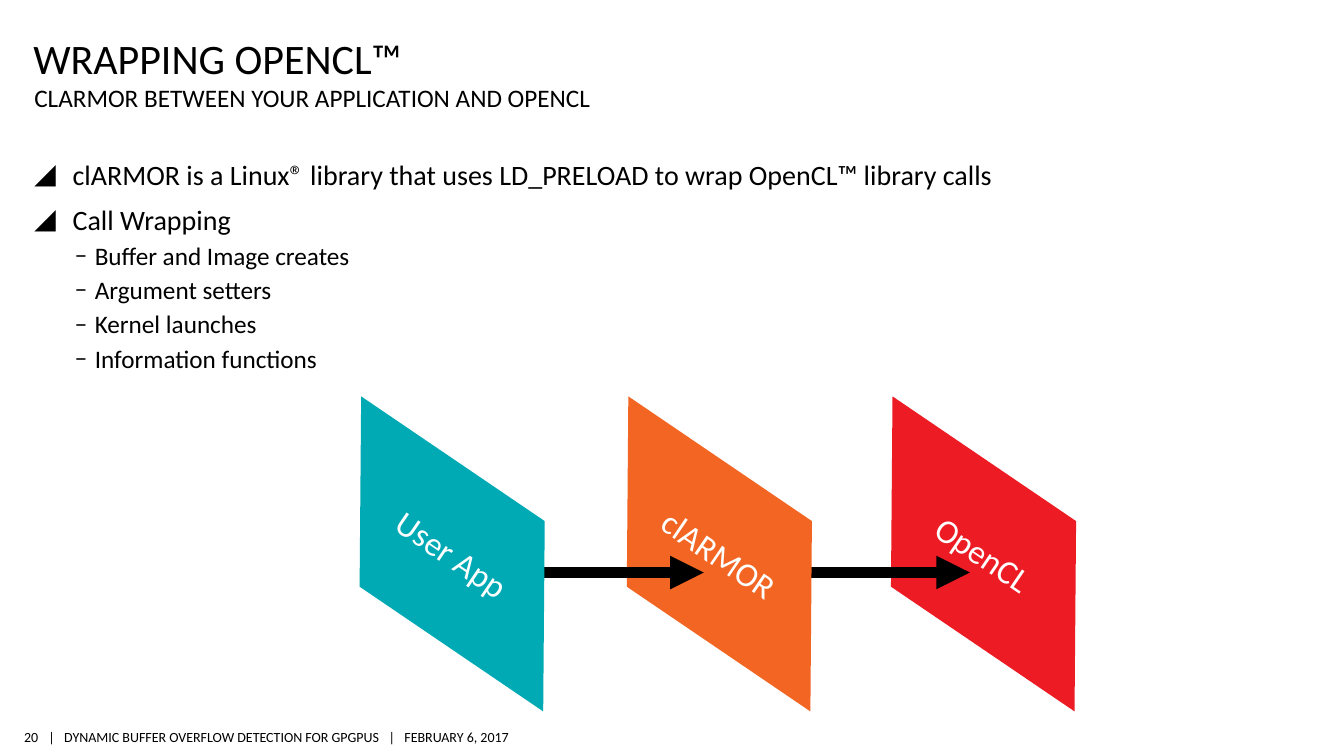
from dataclasses import dataclass

from lxml.etree import SubElement
from pptx import Presentation
from pptx.dml.color import RGBColor as RGB
from pptx.enum.shapes import MSO_CONNECTOR as CONNECTOR, MSO_SHAPE as SHAPE
from pptx.enum.text import MSO_ANCHOR as ANCHOR, MSO_AUTO_SIZE as AUTO_SIZE, PP_ALIGN as ALIGN
from pptx.oxml.ns import qn
from pptx.util import Inches, Pt


@dataclass(frozen=True)
class Theme:
    font: str = "Calibri"
    ink: str = "000000"
    paper: str = "FFFFFF"
    teal: str = "00AAB5"
    orange: str = "F26522"
    red: str = "ED1C24"
    title: int = 30
    panel: int = 24
    bullet: int = 20
    detail: int = 18
    footer: int = 10


theme = Theme()


def style(paragraph, size, color=theme.ink, align=ALIGN.LEFT):
    paragraph.alignment = align
    for run in paragraph.runs:
        run.font.name = theme.font
        run.font.size = Pt(size)
        run.font.color.rgb = RGB.from_string(color)


def fit(box, place, anchor, above=0, below=0, wrap=True):
    box.left, box.top, box.width, box.height = map(Inches, place)
    frame = box.text_frame
    frame.auto_size = AUTO_SIZE.NONE
    frame.word_wrap = wrap
    frame.vertical_anchor = anchor
    frame.margin_left = frame.margin_right = 0
    frame.margin_top, frame.margin_bottom = Inches(above), Inches(below)
    return frame


deck = Presentation()
deck.slide_width, deck.slide_height = Inches(13.33), Inches(7.5)
slide = deck.slides.add_slide(deck.slide_layouts[3])
shapes = slide.shapes
heading, points, subheading = slide.placeholders

footer = [
    ("20", (0.22, 7.18, 0.16, 0.26), ALIGN.RIGHT),
    ("|   DYNAMIC BUFFER OVERFLOW DETECTION FOR GPGPUS   |   FEBRUARY 6, 2017",
     (0.48, 7.18, 4.71, 0.26), ALIGN.LEFT),
]
for words, place, align in footer:
    frame = fit(shapes.add_textbox(0, 0, 0, 0), place, ANCHOR.MIDDLE, 0.04, 0.04, wrap=False)
    frame.text = words
    style(frame.paragraphs[0], theme.footer, align=align)

frame = fit(heading, (0.33, 0.3, 11.4, 0.52), ANCHOR.BOTTOM, above=0.05)
frame.text = "WRAPPING OPENCL™"
style(frame.paragraphs[0], theme.title)

frame = fit(subheading, (0.34, 0.82, 11.4, 0.31), ANCHOR.TOP)
frame.text = "CLARMOR BETWEEN YOUR APPLICATION AND OPENCL"
paragraph = frame.paragraphs[0]
properties = paragraph._p.get_or_add_pPr()
properties.set("marL", "0")
properties.set("indent", "0")
SubElement(properties, qn("a:buNone"))
paragraph.space_before = Pt(0)
style(paragraph, theme.detail)

outline = [
    (0, "clARMOR is a Linux® library that uses LD_PRELOAD to wrap OpenCL™ library calls"),
    (0, "Call Wrapping"),
    (1, "Buffer and Image creates"),
    (1, "Argument setters"),
    (1, "Kernel launches"),
    (1, "Information functions"),
]
levels = [
    ("◢", 0.38, 0.38, 8, theme.bullet),
    ("‒", 0.6, 0.2, 3, theme.detail),
]
frame = fit(points, (0.34, 1.51, 12.4, 5.4), ANCHOR.TOP, 0.05, 0.05)
frame.text = "\n".join(words for level, words in outline)
for index, (paragraph, (level, words)) in enumerate(zip(frame.paragraphs, outline)):
    mark, margin, hang, gap, size = levels[level]
    paragraph.level = level
    properties = paragraph._p.get_or_add_pPr()
    properties.set("marL", str(Inches(margin)))
    properties.set("indent", str(-Inches(hang)))
    mark_color = SubElement(properties, qn("a:buClr"))
    SubElement(mark_color, qn("a:srgbClr"), val=theme.ink)
    SubElement(properties, qn("a:buFont"), typeface=theme.font)
    SubElement(properties, qn("a:buChar"), char=mark)
    paragraph.space_before = Pt(gap if index else 0)
    style(paragraph, size)

layers = [
    ("OpenCL", 8.13, theme.red, (7.15, 9.62)),
    ("clARMOR", 5.51, theme.orange, (4.65, 6.98)),
    ("User App", 2.86, theme.teal, None),
]
arrow_y = Inches(5.68)
for words, left, color, call in layers:
    panel = shapes.add_shape(SHAPE.PARALLELOGRAM, Inches(left), Inches(4.71), Inches(3.25), Inches(1.57))
    panel.adjustments[0] = 0.668
    panel.rotation = 34.2
    panel._element.spPr.xfrm.set("flipH", "1")
    panel.shadow.inherit = False
    panel.fill.solid()
    panel.fill.fore_color.rgb = RGB.from_string(color)
    panel.line.fill.background()
    panel.text_frame.text = words
    panel.text_frame.vertical_anchor = ANCHOR.MIDDLE
    style(panel.text_frame.paragraphs[0], theme.panel, theme.paper, ALIGN.CENTER)
    if call:
        start, end = map(Inches, call)
        arrow = shapes.add_connector(CONNECTOR.STRAIGHT, start, arrow_y, end, arrow_y)
        arrow.line.width = Pt(8)
        arrow.line.color.rgb = RGB.from_string(theme.ink)
        SubElement(arrow.line._get_or_add_ln(), qn("a:tailEnd"), type="triangle")
        SubElement(arrow._element.spPr, qn("a:effectLst"))

deck.save("out.pptx")
